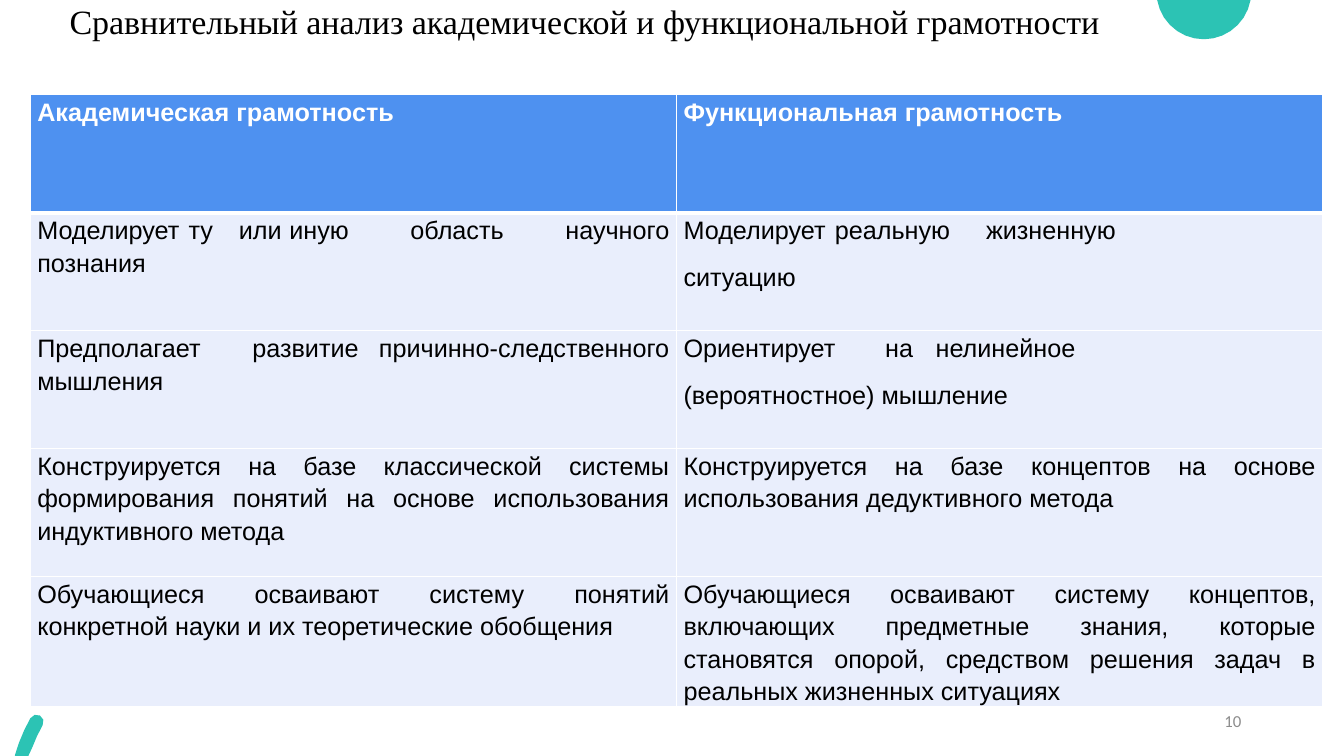
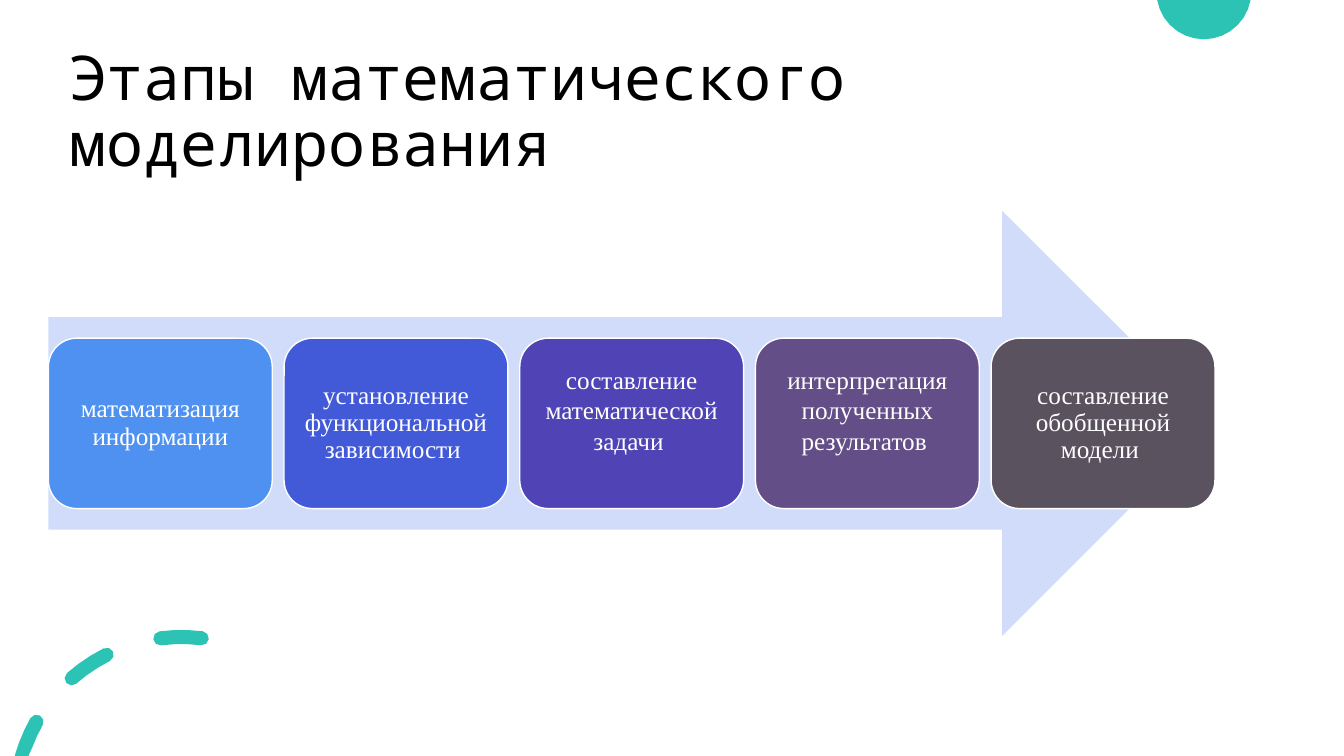
import math
from dataclasses import dataclass

from lxml import etree
from pptx import Presentation, util as u
from pptx.dml.color import RGBColor
from pptx.enum import shapes, text
from pptx.oxml import ns


@dataclass(frozen=True)
class Theme:
    teal: str = "2CC3B4"
    blue: str = "4E91F0"
    cell: str = "E9EEFC"
    arrow: str = "D0DCF9"
    white: str = "FFFFFF"
    black: str = "000000"
    grey: str = "8C8C8C"
    serif: str = "Times New Roman"
    sans: str = "Arial"
    mono: str = "Noto Sans Mono"
    small: str = "Calibri"
    title_size: float = 44
    subtitle_size: float = 24.3
    body_size: float = 18
    number_size: float = 12


@dataclass(frozen=True)
class Arc:
    """Angles in degrees, clockwise from the top; no width means a solid disc."""
    cx: float
    cy: float
    radius: float
    start: float
    end: float
    width: float = 0


@dataclass(frozen=True)
class Stage:
    label: str
    color: str
    spacing: float = 0.9
    lift: float = 0


T = Theme()
SLIDE_W, SLIDE_H = 13.33, 7.5
FIRST_NUMBER = 10

DISC = [Arc(11.94, -0.08, 0.47, 100, 260)]
DASHES = [Arc(1.8, 7.97, 1.65, start, end, 0.14)
          for start, end in ((-74, -60.6), (-41.3, -26.7), (-7.3, 7))]

ROWS = [
    ("Академическая грамотность", "Функциональная грамотность"),
    ("Моделирует\tту\tили\tиную область научного познания",
     "Моделирует\tреальную\tжизненную\nситуацию"),
    ("Предполагает \tразвитие причинно-следственного мышления",
     "Ориентирует\tна\tнелинейное\n(вероятностное) мышление"),
    ("Конструируется на базе классической системы формирования понятий "
     "на основе использования индуктивного метода",
     "Конструируется на базе концептов на основе использования "
     "дедуктивного метода"),
    ("Обучающиеся осваивают систему понятий конкретной науки и их "
     "теоретические обобщения",
     "Обучающиеся осваивают систему концептов, включающих предметные знания, "
     "которые становятся опорой, средством решения задач в реальных "
     "жизненных ситуациях"),
]
ROW_HEIGHTS = (1.17, 1.17, 1.17, 1.27, 1.27)

STAGES = [
    Stage("математизация информации", T.blue),
    Stage("установление функциональной зависимости ", "435AD8"),
    Stage("составление математической задачи ", "5043B5", 1.0, 0.27),
    Stage("интерпретация полученных результатов ", "644E87", 1.0, 0.27),
    Stage("составление обобщенной модели ", "5B5260"),
]


# Shared helpers
def box(*lengths: float) -> list:
    return [u.Inches(v) for v in lengths]


def write(tf, content: str, *, font: str, size: float, color: str = T.black,
          bold: bool = False, align=text.PP_ALIGN.LEFT, spacing: float = 1.0,
          after: float = 0, anchor=text.MSO_ANCHOR.MIDDLE) -> None:
    tf.word_wrap = True
    tf.vertical_anchor = anchor
    for i, line in enumerate(content.split("\n")):
        p = tf.add_paragraph() if i else tf.paragraphs[0]
        p.alignment, p.line_spacing = align, spacing
        p.space_before, p.space_after = u.Pt(0), u.Pt(after)
        r = p.add_run()
        r.text = line
        r.font.name, r.font.size, r.font.bold = font, u.Pt(size), bold
        r.font.color.rgb = RGBColor.from_string(color)


def paint(sp, fill: str, line: str = "") -> None:
    sp.shadow.inherit = False
    sp.fill.solid()
    sp.fill.fore_color.rgb = RGBColor.from_string(fill)
    if line:
        sp.line.color.rgb = RGBColor.from_string(line)
        sp.line.width = u.Pt(1)
    else:
        sp.line.fill.background()


def add_titled_slide(prs, title: str, top: float, height: float,
                     font: str, size: float):
    s = prs.slides.add_slide(prs.slide_layouts[5])
    sp = s.shapes.title
    sp.left, sp.top, sp.width, sp.height = box(0.59, top, 11.5, height)
    sp.text_frame.auto_size = text.MSO_AUTO_SIZE.NONE
    write(sp.text_frame, title, font=font, size=size, spacing=0.9)
    return s


# Layout decoration
def sweep(cx: float, cy: float, radius: float, start: float, end: float,
          steps: int) -> list:
    angles = (math.radians(start + (end - start) * i / steps)
              for i in range(steps + 1))
    return [(cx + radius * math.sin(a), cy - radius * math.cos(a))
            for a in angles]


def outline(arc: Arc) -> list:
    half = arc.width / 2
    if not arc.width:
        points = sweep(arc.cx, arc.cy, arc.radius, arc.start, arc.end, 14)
    else:
        # Outer edge, round cap, inner edge, round cap
        (sx, sy), (ex, ey) = sweep(arc.cx, arc.cy, arc.radius,
                                   arc.start, arc.end, 1)
        points = sweep(arc.cx, arc.cy, arc.radius + half, arc.start, arc.end, 3)
        points += sweep(ex, ey, half, arc.end, arc.end + 180, 4)[1:-1]
        points += sweep(arc.cx, arc.cy, arc.radius - half, arc.end, arc.start, 3)
        points += sweep(sx, sy, half, arc.start + 180, arc.start + 360, 4)[1:-1]
    return [(u.Inches(x), u.Inches(min(max(y, 0), SLIDE_H))) for x, y in points]


def decorate_layout(s) -> None:
    """Draw the ornaments and move them to the layout of the slide."""
    for i, arcs in enumerate((DISC, DASHES)):
        outlines = [outline(arc) for arc in arcs]
        builder = s.shapes.build_freeform(*outlines[0][0], scale=1.0)
        for j, (first, *rest) in enumerate(outlines):
            if j:
                builder.move_to(*first)
            builder.add_line_segments(rest, close=True)
        sp = builder.convert_to_shape()
        paint(sp, T.teal)
        sp.element.xpath("./p:nvSpPr/p:cNvPr")[0].set("id", str(20 + i))
        s.slide_layout.shapes.element.append(sp.element)


# Comparison table
def set_borders(cell, top: float, bottom: float) -> None:
    tc_pr = cell.fill._xPr
    widths = {"lnL": 1, "lnR": 1, "lnT": top, "lnB": bottom}
    for i, (tag, width) in enumerate(widths.items()):
        ln = etree.Element(ns.qn(f"a:{tag}"), w=str(u.Pt(width)))
        fill = etree.SubElement(ln, ns.qn("a:solidFill"))
        etree.SubElement(fill, ns.qn("a:srgbClr"), val=T.white)
        tc_pr.insert(i, ln)


def add_comparison(s) -> None:
    table = s.shapes.add_table(len(ROWS), 2,
                               *box(0.3, 0.94, 12.82, sum(ROW_HEIGHTS))).table
    for column in table.columns:
        column.width = u.Inches(6.41)
    for i, (row, height) in enumerate(zip(ROWS, ROW_HEIGHTS)):
        table.rows[i].height = u.Inches(height)
        header = i == 0
        for j, content in enumerate(row):
            cell = table.cell(i, j)
            cell.margin_left = cell.margin_right = u.Inches(0.07)
            cell.margin_top = cell.margin_bottom = 0
            cell.fill.solid()
            cell.fill.fore_color.rgb = RGBColor.from_string(
                T.blue if header else T.cell)
            set_borders(cell, top=3 if i == 1 else 1, bottom=3 if header else 1)
            write(cell.text_frame, content, font=T.sans, size=T.body_size,
                  color=T.white if header else T.black, bold=header,
                  align=text.PP_ALIGN.JUSTIFY, spacing=1.15, after=10,
                  anchor=text.MSO_ANCHOR.TOP)


def add_slide_number(s) -> None:
    tf = s.shapes.add_textbox(*box(9.41, 6.95, 3, 0.4)).text_frame
    write(tf, str(FIRST_NUMBER), font=T.small, size=T.number_size,
          color=T.grey, align=text.PP_ALIGN.RIGHT)
    # Turn the run into a slide number field
    run = tf.paragraphs[0].runs[0]._r
    field = etree.Element(ns.qn("a:fld"), type="slidenum",
                          id="{B6F15528-21DE-4FAA-801E-634DDDAF4B2B}")
    run.addprevious(field)
    field.extend(list(run))
    run.getparent().remove(run)


# Stages on the arrow
def add_stages(s) -> None:
    left, width, height = 0.48, 2.22, 1.69
    arrow_top, arrow_w, arrow_h = 2.09, 11.57, 4.22
    arrow = s.shapes.add_shape(shapes.MSO_SHAPE.RIGHT_ARROW,
                               *box(left, arrow_top, arrow_w, arrow_h))
    paint(arrow, T.arrow)
    pitch = (arrow_w - width) / (len(STAGES) - 1)
    top = arrow_top + (arrow_h - height) / 2
    for i, stage in enumerate(STAGES):
        sp = s.shapes.add_shape(shapes.MSO_SHAPE.ROUNDED_RECTANGLE,
                                *box(left + i * pitch, top, width, height))
        paint(sp, stage.color, T.white)
        tf = sp.text_frame
        tf.margin_left = tf.margin_right = tf.margin_top = u.Inches(0.07)
        tf.margin_bottom = u.Inches(0.07 + stage.lift)
        write(tf, stage.label, font=T.serif, size=T.body_size, color=T.white,
              align=text.PP_ALIGN.CENTER, spacing=stage.spacing)


def main() -> None:
    prs = Presentation()
    prs.slide_width, prs.slide_height = box(SLIDE_W, SLIDE_H)
    prs.element.set("firstSlideNum", str(FIRST_NUMBER))
    # Default tab stops one inch apart
    for level in prs.element.xpath("./p:defaultTextStyle/*[@defTabSz]"):
        level.set("defTabSz", str(u.Inches(1)))

    s = add_titled_slide(
        prs, "Сравнительный анализ академической и функциональной грамотности",
        0.03, 0.4, T.serif, T.subtitle_size)
    decorate_layout(s)
    add_comparison(s)
    add_slide_number(s)

    s = add_titled_slide(prs, "Этапы математического моделирования",
                         0.4, 1.45, T.mono, T.title_size)
    add_stages(s)
    prs.save("out.pptx")


if __name__ == "__main__":
    main()
